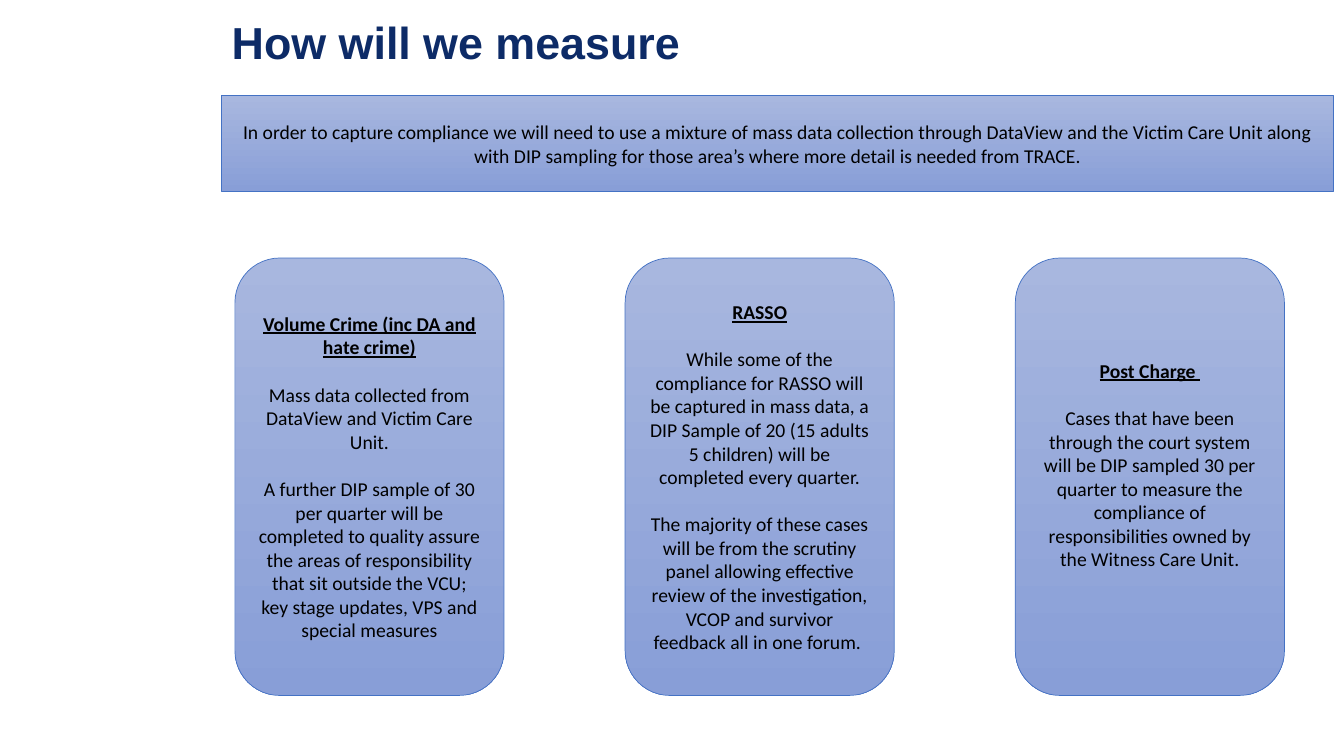
from dataclasses import dataclass

from pptx import Presentation
from pptx.dml.color import RGBColor
from pptx.enum.shapes import MSO_SHAPE
from pptx.enum.text import MSO_ANCHOR, PP_ALIGN
from pptx.util import Pt

RECTANGLE = MSO_SHAPE.RECTANGLE
ROUNDED = MSO_SHAPE.ROUNDED_RECTANGLE
MIDDLE = MSO_ANCHOR.MIDDLE
CENTER = PP_ALIGN.CENTER
EMU_PER_PX = 9144


@dataclass(frozen=True)
class Theme:
    """Colours, fonts and type sizes of the slide."""
    title_color: str = "0D2B67"
    text_color: str = "000000"
    line_color: str = "4472C4"
    gradient: tuple = ("A8B7DF", "889ED7")
    title_font: str = "Arial"
    body_font: str = "Calibri"
    title_size: int = 32
    body_size: int = 14
    paragraph_gap: int = 17


THEME = Theme()
CARD_LEFT, CARD_TOP, CARD_WIDTH, CARD_HEIGHT, CARD_STEP = 233, 256, 267, 434, 387
BOTTOM_INSET = 5
TITLE = "How will we measure"
INTRO = (
    "In order to capture compliance we will need to use a mixture of mass data "
    "collection through DataView and the Victim Care Unit along with DIP sampling "
    "for those area’s where more detail is needed from TRACE."
)
CARDS = [
    (["Volume Crime (inc DA and hate crime)",
      "Mass data collected from DataView and Victim Care Unit.",
      "A further DIP sample of 30 per quarter will be completed to quality assure "
      "the areas of responsibility that sit outside the VCU; key stage updates, "
      "VPS and special measures"], BOTTOM_INSET),
    (["RASSO",
      "While some of the compliance for RASSO will be captured in mass data, a DIP "
      "Sample of 20 (15 adults 5 children) will be completed every quarter.",
      "The majority of these cases will be from the scrutiny panel allowing "
      "effective review of the investigation, VCOP and survivor feedback all in "
      "one forum. "], BOTTOM_INSET),
    (["Post Charge ",
      "Cases that have been through the court system will be DIP sampled 30 per "
      "quarter to measure the compliance of responsibilities owned by the Witness "
      "Care Unit."], BOTTOM_INSET + 24),
]


def px(*lengths):
    """Turn pixel lengths into EMU."""
    return [length * EMU_PER_PX for length in lengths]


def style_font(font, name, size, color, bold=False, underline=False):
    """Set the look of a font."""
    font.name, font.size = name, Pt(size)
    font.bold, font.underline = bold, underline
    font.color.rgb = RGBColor.from_string(color)


def add_title(page, text, bounds):
    """Add the slide title."""
    frame = page.shapes.add_textbox(*px(*bounds)).text_frame
    frame.word_wrap = True
    frame.vertical_anchor = MIDDLE
    frame.text = text
    para = frame.paragraphs[0]
    para.line_spacing = 0.9
    style_font(para.runs[0].font, THEME.title_font, THEME.title_size,
               THEME.title_color, bold=True)


def add_panel(page, kind, bounds, texts, has_heading=False, bottom_inset=BOTTOM_INSET):
    """Add a gradient panel of centred paragraphs, the first possibly a heading."""
    panel = page.shapes.add_shape(kind, *px(*bounds))
    panel.shadow.inherit = False
    panel.fill.gradient()
    panel.fill.gradient_angle = 270
    for stop, color in zip(panel.fill.gradient_stops, THEME.gradient):
        stop.color.rgb = RGBColor.from_string(color)
    panel.line.color.rgb = RGBColor.from_string(THEME.line_color)
    panel.line.width = Pt(0.5)
    frame = panel.text_frame
    frame.word_wrap = True
    frame.vertical_anchor = MIDDLE
    frame.margin_bottom = px(bottom_inset)[0]
    frame.text = "\n".join(texts)
    for index, para in enumerate(frame.paragraphs):
        para.alignment = CENTER
        if index:
            para.space_before = Pt(THEME.paragraph_gap)
        is_heading = has_heading and index == 0
        style_font(para.runs[0].font, THEME.body_font, THEME.body_size,
                   THEME.text_color, is_heading, is_heading)


def main():
    """Build the slide and save it."""
    deck = Presentation()
    deck.slide_width, deck.slide_height = px(1333, 750)
    page = deck.slides.add_slide(deck.slide_layouts[6])
    add_title(page, TITLE, (220, 13, 1103, 64))
    add_panel(page, RECTANGLE, (220, 95, 1103, 95), [INTRO])
    for column, (texts, bottom_inset) in enumerate(CARDS):
        bounds = (CARD_LEFT + column * CARD_STEP, CARD_TOP, CARD_WIDTH, CARD_HEIGHT)
        add_panel(page, ROUNDED, bounds, texts, True, bottom_inset)
    deck.save("out.pptx")


if __name__ == "__main__":
    main()
